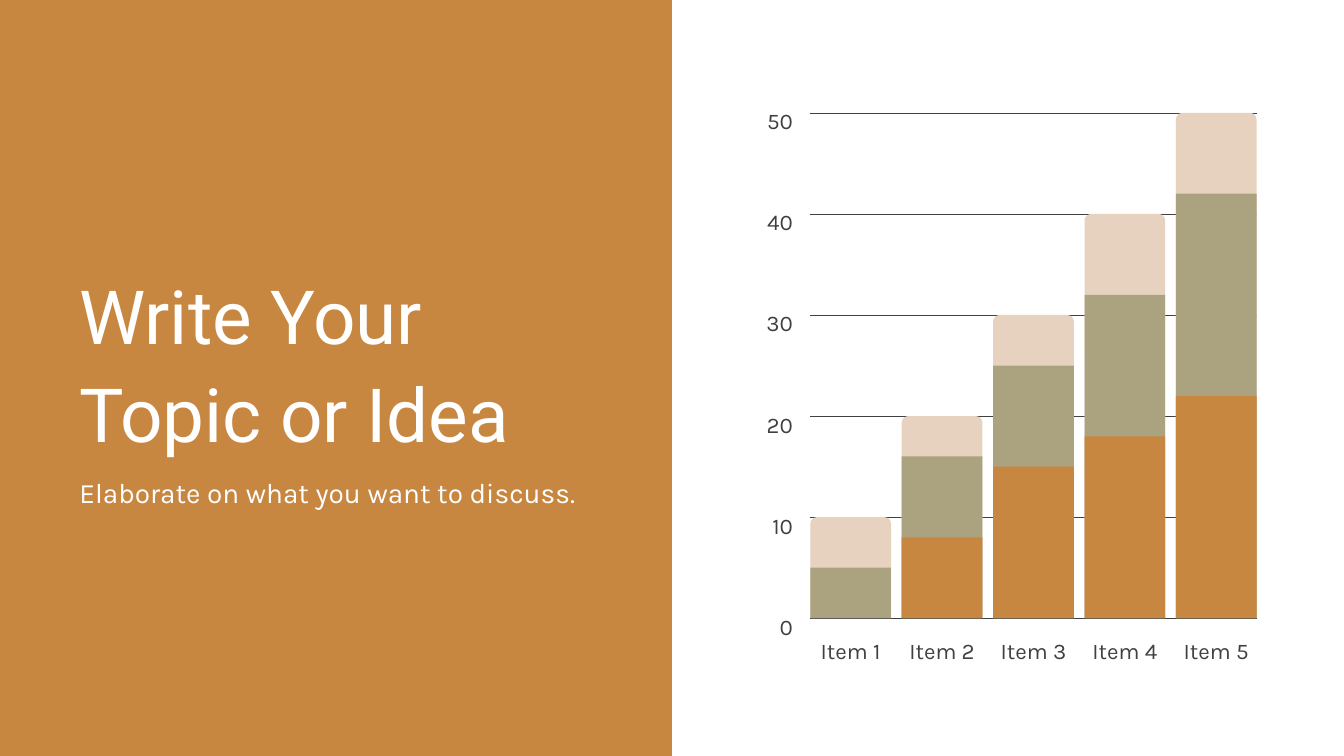
from pptx import Presentation
from pptx.dml.color import RGBColor
from pptx.enum.shapes import MSO_CONNECTOR, MSO_SHAPE
from pptx.enum.text import MSO_AUTO_SIZE, PP_ALIGN
from pptx.oxml.ns import qn
from pptx.util import Inches, Pt
from lxml import etree

LEFT, CENTER, RIGHT = PP_ALIGN.LEFT, PP_ALIGN.CENTER, PP_ALIGN.RIGHT
RECTANGLE = MSO_SHAPE.RECTANGLE
ROUNDED_TOP = MSO_SHAPE.ROUND_2_SAME_RECTANGLE
STRAIGHT = MSO_CONNECTOR.STRAIGHT
GROW_TO_FIT = MSO_AUTO_SIZE.SHAPE_TO_FIT_TEXT

SLIDE_WIDTH = 10
SLIDE_HEIGHT = SLIDE_WIDTH * 9 / 16
ORANGE, GREEN, CREAM = "C88741", "ABA37F", "E7D2BF"
DARK, WHITE = "404040", "FFFFFF"

CHART_LEFT, CHART_RIGHT = 6.03, 9.35
CHART_TOP, CHART_BASE = 0.84, 4.6
AXIS_MAXIMUM, AXIS_STEP = 50, 10
GRIDLINE_POINTS = 0.5
BAR_WIDTH = 0.6
ITEMS = ["Item 1", "Item 2", "Item 3", "Item 4", "Item 5"]
BAR_PITCH = (CHART_RIGHT - CHART_LEFT - BAR_WIDTH) / (len(ITEMS) - 1)
STACK_LEVELS = [
    (CREAM, ROUNDED_TOP, [10, 20, 30, 40, 50]),
    (GREEN, RECTANGLE, [5, 16, 25, 32, 42]),
    (ORANGE, RECTANGLE, [0, 8, 15, 18, 22]),
]


def color(hex_string):
    return RGBColor.from_string(hex_string)


def value_y(value):
    return CHART_BASE - (CHART_BASE - CHART_TOP) * value / AXIS_MAXIMUM


def bar_left(column):
    return CHART_LEFT + column * BAR_PITCH


def add_block(slide, kind, left, top, width, height, fill):
    shape = slide.shapes.add_shape(
        kind, Inches(left), Inches(top), Inches(width), Inches(height))
    shape.shadow.inherit = False
    shape.fill.solid()
    shape.fill.fore_color.rgb = color(fill)
    shape.line.fill.background()
    return shape


def add_text(slide, text, left, top, width, height, size,
             font="Karla", fill=DARK, align=LEFT, spacing=1.4):
    box = slide.shapes.add_textbox(
        Inches(left), Inches(top), Inches(width), Inches(height))
    frame = box.text_frame
    frame.margin_left = frame.margin_right = 0
    frame.margin_top = frame.margin_bottom = 0
    frame.word_wrap = True
    frame.auto_size = GROW_TO_FIT
    paragraph = frame.paragraphs[0]
    paragraph.text = text
    paragraph.alignment = align
    paragraph.line_spacing = spacing
    paragraph.font.name = font
    paragraph.font.size = Pt(size)
    paragraph.font.color.rgb = color(fill)


def add_gridline(slide, top):
    middle = Inches(top) + Pt(GRIDLINE_POINTS / 2)
    line = slide.shapes.add_connector(
        STRAIGHT, Inches(CHART_LEFT), middle, Inches(CHART_RIGHT), middle)
    line.line.color.rgb = color(DARK)
    line.line.width = Pt(GRIDLINE_POINTS)
    etree.SubElement(line._element.spPr, qn("a:effectLst"))


def add_axes(slide):
    for column, item in enumerate(ITEMS):
        add_text(slide, item, bar_left(column), 4.66, BAR_WIDTH, 0.2, 12, align=CENTER)
    values = range(AXIS_MAXIMUM, -1, -AXIS_STEP)
    for value in values:
        add_gridline(slide, value_y(value))
    for value in values:
        add_text(slide, str(value), 5.7, value_y(value) - 0.12, 0.2, 0.2, 12, align=RIGHT)


def add_bars(slide):
    for fill, kind, values in STACK_LEVELS:
        for column, value in enumerate(values):
            if value:
                top = value_y(value)
                bar = add_block(slide, kind, bar_left(column), top,
                                BAR_WIDTH, CHART_BASE - top, fill)
                if kind == ROUNDED_TOP:
                    bar.adjustments[0] = 0.08


def add_title_panel(slide):
    add_block(slide, RECTANGLE, 0, 0, SLIDE_WIDTH / 2, SLIDE_HEIGHT, ORANGE)
    add_text(slide, "Write Your Topic or Idea", 0.59, 1.94, 3.82, 1.41, 40,
             font="Roboto", fill=WHITE, spacing=1.1)
    add_text(slide, "Elaborate on what you want to discuss.",
             0.59, 3.44, 3.82, 0.25, 15, fill=WHITE)


def main():
    presentation = Presentation()
    presentation.slide_width = Inches(SLIDE_WIDTH)
    presentation.slide_height = Inches(SLIDE_HEIGHT)
    slide = presentation.slides.add_slide(presentation.slide_layouts[6])
    add_axes(slide)
    add_bars(slide)
    add_title_panel(slide)
    presentation.save("out.pptx")


if __name__ == "__main__":
    main()
